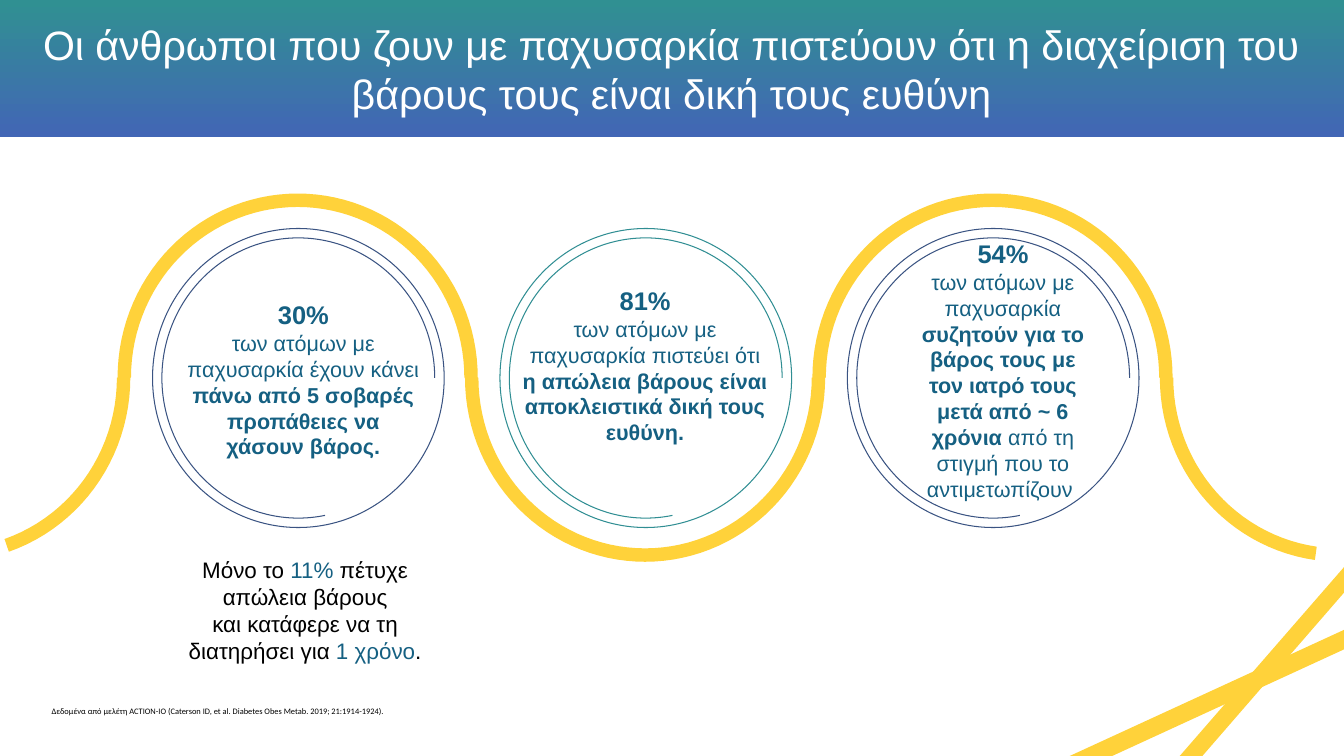
from math import cos, radians, sin

from pptx import Presentation
from pptx.dml.color import RGBColor
from pptx.enum.shapes import MSO_SHAPE
from pptx.enum.text import MSO_ANCHOR, MSO_AUTO_SIZE, PP_ALIGN
from pptx.util import Inches, Pt

RECT, OVAL, ARC = MSO_SHAPE.RECTANGLE, MSO_SHAPE.OVAL, MSO_SHAPE.ARC
CENTER, LEFT = PP_ALIGN.CENTER, PP_ALIGN.LEFT
MIDDLE = MSO_ANCHOR.MIDDLE
NO_FIT, GROW = MSO_AUTO_SIZE.NONE, MSO_AUTO_SIZE.SHAPE_TO_FIT_TEXT

COLORS = {
    "top": "309092", "base": "4266B5", "yellow": "FFD23A", "navy": "3A5382",
    "teal": "308E93", "blue": "156082", "black": "000000", "white": "FFFFFF",
}
TITLE = ("Οι άνθρωποι που ζουν με παχυσαρκία πιστεύουν ότι η διαχείριση του "
         "βάρους τους είναι δική τους ευθύνη")
SOURCE = ("Δεδομένα από μελέτη ACTION-IO (Caterson ID, et al. "
          "Diabetes Obes Metab. 2019; 21:1914-1924).")

# Ring colour, text box, share, then (text, bold) runs
FACTS = [
    ("navy", (2.76, 4.38, 3.51, 3.37), "30%", [
        ("των ατόμων με παχυσαρκία έχουν κάνει ", False),
        ("πάνω από 5 σοβαρές προπάθειες να χάσουν βάρος.", True)]),
    ("teal", (7.77, 4.17, 3.66, 3.33), "81%", [
        ("των ατόμων με παχυσαρκία πιστεύει ότι ", False),
        ("η απώλεια βάρους είναι αποκλειστικά δική τους ευθύνη.", True)]),
    ("navy", (13.58, 3.47, 2.69, 4.04), "54%", [
        ("των ατόμων με παχυσαρκία ", False),
        ("συζητούν για το βάρος τους με τον ιατρό τους μετά από ~ 6 χρόνια ", True),
        ("από τη στιγμή που το αντιμετωπίζουν ", False)]),
]
NOTE = [
    [("Μόνο το ", "black"), ("11%", "blue"), (" πέτυχε", "black")],
    [("απώλεια βάρους", "black")],
    [("και κατάφερε να τη", "black")],
    [("διατηρήσει για ", "black"), ("1 χρόνο", "blue"), (".", "black")],
]
STRIPES = [
    [(20.27, 8.13), (20.46, 8.29), (17.52, 11.68), (17.33, 11.51)],
    [(20.29, 9.24), (20.4, 9.48), (15.92, 11.54), (15.81, 11.3)],
]
PITCH = 5.17  # distance between ring centres


def rgb(name):
    return RGBColor.from_string(COLORS[name])


def inches(box):
    return [Inches(v) for v in box]


def style(par, size, color, font="Arial", align=CENTER, bold=False):
    par.alignment = align
    par.font.name, par.font.size, par.font.bold = font, Pt(size), bold
    par.font.color.rgb = rgb(color)


def add_text(slide, box, inset=None):
    frame = slide.shapes.add_textbox(*inches(box)).text_frame
    frame.word_wrap, frame.auto_size = True, GROW
    if inset is not None:
        frame.margin_left = frame.margin_right = Inches(inset)
        frame.margin_top = frame.margin_bottom = Inches(inset)
    return frame


def add_shape(slide, kind, box, color):
    """Add an outlined shape without a fill."""
    shape = slide.shapes.add_shape(kind, *inches(box))
    shape.shadow.inherit = False
    shape.fill.background()
    shape.line.color.rgb = rgb(color)
    shape.line.width = Pt(1.1)
    return shape


def add_area(slide, points):
    """Fill the outline through the points, given in inches, with yellow."""
    start, *rest = [inches(point) for point in points]
    pen = slide.shapes.build_freeform(*start)
    pen.add_line_segments(rest, close=True)
    area = pen.convert_to_shape()
    area.shadow.inherit = False
    area.fill.solid()
    area.fill.fore_color.rgb = rgb("yellow")
    area.line.fill.background()


def add_header(slide, box):
    band = slide.shapes.add_shape(RECT, *inches(box))
    band.shadow.inherit = False
    band.line.fill.background()
    band.fill.gradient()
    band.fill.gradient_angle = 270
    for stop, name in zip(band.fill.gradient_stops, ("top", "base")):
        stop.color.rgb = rgb(name)
    title = slide.shapes.title
    title.element.addprevious(band.element)
    title.left, title.top, title.width, title.height = inches(box)
    frame = title.text_frame
    frame.text = TITLE
    frame.word_wrap, frame.auto_size = True, NO_FIT
    frame.vertical_anchor = MIDDLE
    style(frame.paragraphs[0], 44, "white")


def wave_edge(left, mid, shift):
    """Trace half-ellipses, alternately below and above mid, shifted down."""
    spans = [(71, 0), (180, 0), (180, 0), (180, 0), (180, 98)]
    points = []
    for i, (start, end) in enumerate(spans):
        sign = 1 if i % 2 == 0 else -1
        grow = sign * shift
        steps = (start - end) // 3
        for k in range(steps + 1):
            turn = radians(start + (end - start) * k / steps)
            points.append((left + i * PITCH + (2.58 + grow) * cos(turn),
                           mid + sign * (2.64 + grow) * sin(turn)))
    return points


def add_wave(slide, left, mid):
    upper, lower = (wave_edge(left, mid, d) for d in (-0.1, 0.1))
    add_area(slide, upper + lower[::-1])


def add_ring(slide, box, color):
    """Draw a full circle with an open arc inside it."""
    x, y, w, h = box
    add_shape(slide, OVAL, box, color)
    gap = 0.14
    arc = add_shape(slide, ARC, (x + gap, y + gap, w - 2 * gap, h - 2 * gap), color)
    arc.adjustments[0] = 79 * 0.6  # 79 degrees, in units of 100000/60000
    arc.adjustments[1] = 0


def add_fact(slide, box, share, runs):
    frame = add_text(slide, box, 0)
    head = frame.paragraphs[0]
    head.text = share
    style(head, 27.3, "blue", bold=True)
    head.line_spacing = Pt(38.2)
    body = frame.add_paragraph()
    style(body, 23.1, "blue")
    body.line_spacing = Pt(27.7)
    for text, bold in runs:
        run = body.add_run()
        run.text, run.font.bold = text, bold


def add_note(slide, box):
    frame = add_text(slide, box)
    for i, runs in enumerate(NOTE):
        par = frame.add_paragraph() if i else frame.paragraphs[0]
        style(par, 24, "black")
        for text, color in runs:
            run = par.add_run()
            run.text = text
            run.font.color.rgb = rgb(color)


def add_source(slide, box):
    par = add_text(slide, box).paragraphs[0]
    par.text = SOURCE
    style(par, 9, "black", "Calibri", LEFT)


def main():
    deck = Presentation()
    deck.slide_width, deck.slide_height = Inches(20), Inches(11.25)
    slide = deck.slides.add_slide(deck.slide_layouts[5])
    add_header(slide, (0, 0, 20, 2.04))
    for points in STRIPES:
        add_area(slide, points)
    add_wave(slide, -0.74, 5.62)
    for i, (color, box, share, runs) in enumerate(FACTS):
        add_ring(slide, (2.27 + i * PITCH, 3.4, 4.34, 4.45), color)
        add_fact(slide, box, share, runs)
    add_source(slide, (0.67, 10.46, 10.29, 0.25))
    add_note(slide, (2.47, 8.23, 4.14, 1.72))
    deck.save("out.pptx")


if __name__ == "__main__":
    main()
